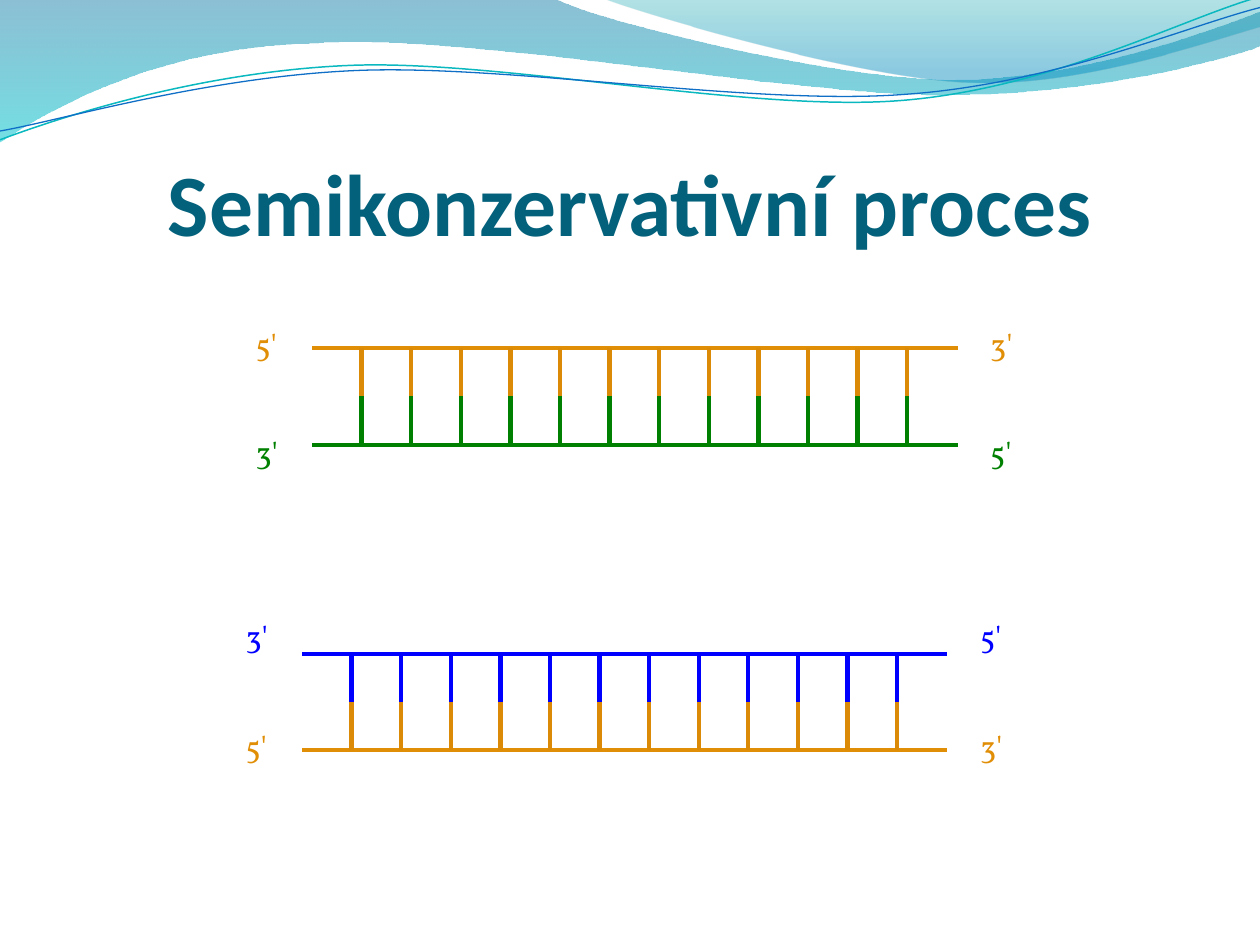
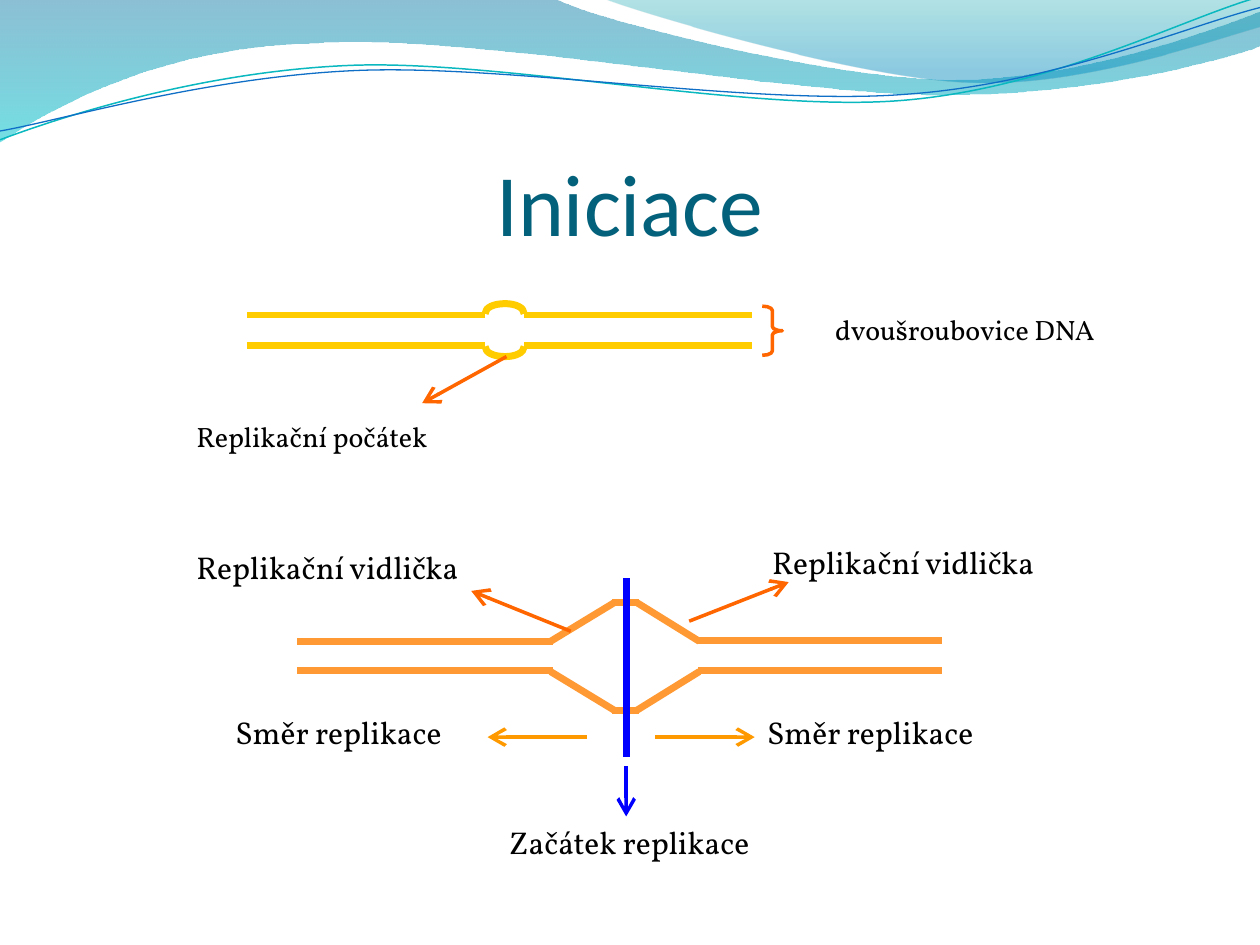
"""Build two slides on DNA replication."""
from dataclasses import dataclass
from typing import Optional

from lxml import etree
from pptx import Presentation
from pptx import slide as s
from pptx import util as u
from pptx.dml import color as c
from pptx.enum import shapes, text
from pptx.oxml import ns
from pptx.shapes import autoshape, connector
from pptx.text import text as t

COLORS = {
    "title": "04617B", "text": "000000", "old strand": "E18E07", "old rung": "DB8A07",
    "green strand": "008000", "blue strand": "0000FF", "helix": "FFCC00", "fork": "FF9933",
    "pointer": "FF6600", "direction": "FF9900", "wave teal": "0AB8BF", "wave blue": "0F6FC6",
    "band top": "0074A1", "band bottom": "00C6CF", "crest top": "00A1A9", "crest bottom": "008BBF",
}
TITLE_FONT, BODY_FONT = "Calibri", "Vollkorn"
STRAND_LENGTH = 5.12
RUNG_COUNT, RUNG_START, RUNG_SPAN = 12, 0.39, 4.33
Point = tuple[float, float]


@dataclass(frozen=True)
class Stop:
    """One gradient stop, with place and opacity in percent."""
    place: int
    color: str
    opacity: int


@dataclass(frozen=True)
class Curve:
    """An outline of straight (one point) and cubic (three points) steps."""
    start: Point
    steps: list[tuple[Point, ...]]
    stops: tuple[Stop, ...] = ()
    color: str = ""
    width: float = 0


@dataclass(frozen=True)
class Strand:
    """One strand of a ladder with the marks at its two ends."""
    y: float
    color: str
    rung_color: str
    left_mark: str
    right_mark: str
    mark_top: float


@dataclass(frozen=True)
class Ladder:
    """A double strand joined by evenly spaced rungs."""
    left: float
    upper: Strand
    lower: Strand


@dataclass(frozen=True)
class Line:
    """A straight line, with an arrowhead at its end on request."""
    begin: Point
    end: Point
    color: str
    width: float = 4
    arrow: bool = False


@dataclass(frozen=True)
class Label:
    """A text label on one line."""
    words: str
    left: float
    top: float
    width: float
    height: float = 0.43
    size: float = 18
    color: str = "text"


WAVES = [
    Curve((0, 0), [
        ((4.4, -0.01),), ((4.76, 0.17), (6.64, 0.63), (7.58, 0.63)),
        ((8.53, 0.63), (9.58, 0.26), (10, 0.09)), ((10.01, 0.36),),
        ((9.83, 0.44), (8.7, 0.76), (7.46, 0.75)), ((6.22, 0.75), (3.82, 0.28), (2.57, 0.34)),
        ((1.29, 0.36), (0.46, 0.83), (-0.01, 1.13))],
        stops=(Stop(0, "band top", 45), Stop(100, "band bottom", 55))),
    Curve((4.79, -0.01), [
        ((5.09, 0.11), (6.82, 0.62), (7.69, 0.65)), ((8.56, 0.69), (9.61, 0.32), (10, 0.21)),
        ((10, 0),)],
        stops=(Stop(0, "crest top", 30), Stop(80, "crest bottom", 45))),
    Curve((0, 1.11), [
        ((0.48, 0.93), (1.58, 0.57), (2.77, 0.52)), ((3.95, 0.47), (5.93, 0.89), (7.13, 0.8)),
        ((8.33, 0.71), (9.38, 0.15), (9.98, -0.02))], color="wave teal", width=0.85),
    Curve((0, 1.04), [
        ((0.47, 0.96), (1.64, 0.61), (2.83, 0.56)), ((4.03, 0.51), (5.97, 0.84), (7.17, 0.75)),
        ((8.36, 0.67), (9.41, 0.21), (10, 0.06))], color="wave blue", width=0.75),
]
LADDERS = [
    Ladder(2.48, Strand(2.76, "old strand", "old rung", "5'", "3'", 2.53),
           Strand(3.53, "green strand", "green strand", "3'", "5'", 3.39)),
    Ladder(2.4, Strand(5.19, "blue strand", "blue strand", "3'", "5'", 4.85),
           Strand(5.95, "old strand", "old rung", "5'", "3'", 5.72)),
]
HELIX_AXIS, FORK_AXIS = 2.62, 5.21
HELIX_PIECES = [((1.96, 2.5), (3.85, 2.5)), ((4.16, 2.5), (5.97, 2.5))]
BUBBLE = [(3.85, 2.49), (3.85, 2.44), (3.92, 2.41), (4.01, 2.41),
          (4.09, 2.41), (4.16, 2.44), (4.16, 2.49)]
FORK_ARMS = [((2.36, 5.09), (4.39, 5.09)), ((5.54, 5.08), (7.48, 5.08)),
             ((2.36, 5.32), (4.39, 5.32)), ((5.54, 5.32), (7.48, 5.32))]
FORK_OPENING = [((5.05, 4.78), (5.55, 5.09)), ((4.86, 4.78), (5.07, 4.78)),
                ((4.37, 5.09), (4.88, 4.78))]
MARKERS = [
    Line((4.02, 2.83), (3.35, 3.2), "pointer", 2, True),
    Line((4.53, 5.01), (3.74, 4.69), "pointer", 2, True),
    Line((5.47, 4.93), (6.26, 4.62), "pointer", 2, True),
    Line((4.66, 5.85), (3.87, 5.85), "direction", 2, True),
    Line((5.2, 5.85), (5.99, 5.85), "direction", 2, True),
    Line((4.97, 4.59), (4.97, 6.01), "blue strand"),
    Line((4.97, 6.08), (4.97, 6.48), "blue strand", 2, True),
]
LABELS = [
    Label("Replikační počátek", 1.46, 3.28, 2.14, 0.37, 16),
    Label("dvoušroubovice DNA", 6.53, 2.43, 2.32, 0.37, 16),
    Label("Replikační vidlička", 1.46, 4.3, 2.59),
    Label("Replikační vidlička", 6.03, 4.26, 2.59),
    Label("Směr replikace", 1.77, 5.61, 2.16),
    Label("Směr replikace", 5.99, 5.61, 2.16),
    Label("Začátek replikace", 3.94, 6.48, 2.54),
]


def rgb(name: str) -> c.RGBColor:
    """Look up a named colour."""
    return c.RGBColor.from_string(COLORS[name])


def write(frame: t.TextFrame, words: str, *, size: float, color: str, font: str = BODY_FONT,
          bold: bool = False, align: Optional[text.PP_ALIGN] = None) -> None:
    """Put one formatted paragraph in a text frame."""
    para = frame.paragraphs[0]
    para.alignment = align
    span = para.add_run()
    span.text = words
    span.font.size, span.font.name, span.font.bold = u.Pt(size), font, bold
    span.font.color.rgb = rgb(color)


def mirror(point: Point, axis: float) -> Point:
    """Reflect a point across a horizontal axis."""
    return point[0], 2 * axis - point[1]


def bend(shape: autoshape.Shape, steps: list[tuple[Point, ...]]) -> None:
    """Join the points of each cubic step into one Bézier segment."""
    nodes = iter(list(shape.element.spPr.iter(ns.qn("a:lnTo"))))
    for step in steps:
        group = [next(nodes) for _ in step]
        if len(group) == 3:
            group[0].tag
            cubic = etree.Element(ns.qn("a:cubicBezTo"))
            group[0].addprevious(cubic)
            for node in group:
                cubic.append(node[0])
                node.getparent().remove(node)


def draw_curve(page: s.Slide, curve: Curve) -> autoshape.Shape:
    """Draw a curve as a gradient area or as an open line."""
    corners = [curve.start, *(point for step in curve.steps for point in step)]
    points = [(u.Inches(x), u.Inches(y)) for x, y in corners]
    builder = page.shapes.build_freeform(*points[0])
    builder.add_line_segments(points[1:], close=bool(curve.stops))
    shape = builder.convert_to_shape()
    bend(shape, curve.steps)
    shape.shadow.inherit = False
    if not curve.stops:
        shape.fill.background()
        shape.line.color.rgb = rgb(curve.color)
        shape.line.width = u.Pt(curve.width)
        return shape
    shape.line.fill.background()
    shape.fill.gradient()
    shape.fill.gradient_angle = 270
    for target, stop in zip(shape.fill.gradient_stops, curve.stops):
        target.position = stop.place / 100
        target.color.rgb = rgb(stop.color)
    for node, stop in zip(shape.element.spPr.iter(ns.qn("a:srgbClr")), curve.stops):
        etree.SubElement(node, ns.qn("a:alpha")).set("val", str(stop.opacity * 1000))
    return shape


def draw_line(page: s.Slide, line: Line) -> connector.Connector:
    """Draw a straight connector."""
    ends = [u.Inches(value) for value in (*line.begin, *line.end)]
    link = page.shapes.add_connector(shapes.MSO_CONNECTOR.STRAIGHT, *ends)
    link.line.color.rgb = rgb(line.color)
    link.line.width = u.Pt(line.width)
    properties = link.element.spPr
    if line.arrow:
        head = etree.SubElement(properties.find(ns.qn("a:ln")), ns.qn("a:tailEnd"))
        for key, value in (("type", "arrow"), ("w", "lg"), ("len", "lg")):
            head.set(key, value)
    etree.SubElement(properties, ns.qn("a:effectLst"))
    return link


def draw_label(page: s.Slide, label: Label) -> None:
    """Draw a label that grows with its text."""
    box = page.shapes.add_textbox(u.Inches(label.left), u.Inches(label.top),
                                  u.Inches(label.width), u.Inches(label.height))
    box.text_frame.word_wrap = False
    box.text_frame.auto_size = text.MSO_AUTO_SIZE.SHAPE_TO_FIT_TEXT
    write(box.text_frame, label.words, size=label.size, color=label.color)


def draw_ladder(page: s.Slide, ladder: Ladder) -> None:
    """Draw both strands of a ladder with their rungs and end marks."""
    middle = (ladder.upper.y + ladder.lower.y) / 2
    for strand in (ladder.upper, ladder.lower):
        y = strand.y
        draw_line(page, Line((ladder.left, y), (ladder.left + STRAND_LENGTH, y), strand.color, 2.5))
        for k in range(RUNG_COUNT):
            x = ladder.left + RUNG_START + k * RUNG_SPAN / (RUNG_COUNT - 1)
            draw_line(page, Line((x, min(y, middle)), (x, max(y, middle)), strand.rung_color, 2.5))
        for mark, offset in ((strand.left_mark, -0.55), (strand.right_mark, 5.28)):
            draw_label(page, Label(mark, ladder.left + offset, strand.mark_top, 0.48,
                                   color=strand.color))


def draw_helix(page: s.Slide) -> None:
    """Draw the closed double helix with its origin bubble and brace."""
    for begin, end in HELIX_PIECES:
        draw_line(page, Line(begin, end, "helix"))
        draw_line(page, Line(mirror(begin, HELIX_AXIS), mirror(end, HELIX_AXIS), "helix"))
    for arc in (BUBBLE, [mirror(point, HELIX_AXIS) for point in BUBBLE]):
        draw_curve(page, Curve(arc[0], [tuple(arc[1:4]), tuple(arc[4:])], color="helix", width=4))
    brace = page.shapes.add_shape(shapes.MSO_SHAPE.RIGHT_BRACE, u.Inches(6.05), u.Inches(2.43),
                                  u.Inches(0.16), u.Inches(0.39))
    brace.adjustments[0], brace.adjustments[1] = 0.21, 0.5
    brace.shadow.inherit = False
    brace.fill.background()
    brace.line.color.rgb = rgb("pointer")
    brace.line.width = u.Pt(2)


def draw_fork(page: s.Slide) -> None:
    """Draw the opened helix with its two forks."""
    lower = [(mirror(begin, FORK_AXIS), mirror(end, FORK_AXIS)) for begin, end in FORK_OPENING]
    for begin, end in FORK_ARMS + FORK_OPENING + lower:
        draw_line(page, Line(begin, end, "fork"))


def add_page(deck, title: str, bold: bool = False) -> s.Slide:
    """Add a slide with a formatted title."""
    page = deck.slides.add_slide(deck.slide_layouts[5])
    box = page.shapes.title
    box.left, box.top, box.width, box.height = map(u.Inches, (0.5, 0.77, 9, 1.25))
    frame = box.text_frame
    frame.auto_size = text.MSO_AUTO_SIZE.NONE
    frame.vertical_anchor = text.MSO_ANCHOR.BOTTOM
    frame.margin_left = frame.margin_right = frame.margin_bottom = 0
    frame.margin_top = u.Inches(0.05)
    write(frame, title, size=50, color="title", font=TITLE_FONT, bold=bold,
          align=text.PP_ALIGN.CENTER)
    return page


def set_master_waves(deck, page: s.Slide) -> None:
    """Draw the waves and move them behind everything on the master."""
    tree = deck.slide_master.element.cSld.spTree
    for k, wave in enumerate(WAVES):
        node = draw_curve(page, wave).element
        node.nvSpPr.cNvPr.id = 101 + k
        tree.insert(2 + k, node)


def main() -> None:
    """Build and save the deck."""
    deck = Presentation()
    deck.slide_width, deck.slide_height = u.Inches(10), u.Inches(7.5)
    process = add_page(deck, "Semikonzervativní proces", bold=True)
    set_master_waves(deck, process)
    for ladder in LADDERS:
        draw_ladder(process, ladder)
    initiation = add_page(deck, "Iniciace")
    draw_helix(initiation)
    draw_fork(initiation)
    for marker in MARKERS:
        draw_line(initiation, marker)
    for label in LABELS:
        draw_label(initiation, label)
    deck.save("out.pptx")


if __name__ == "__main__":
    main()
